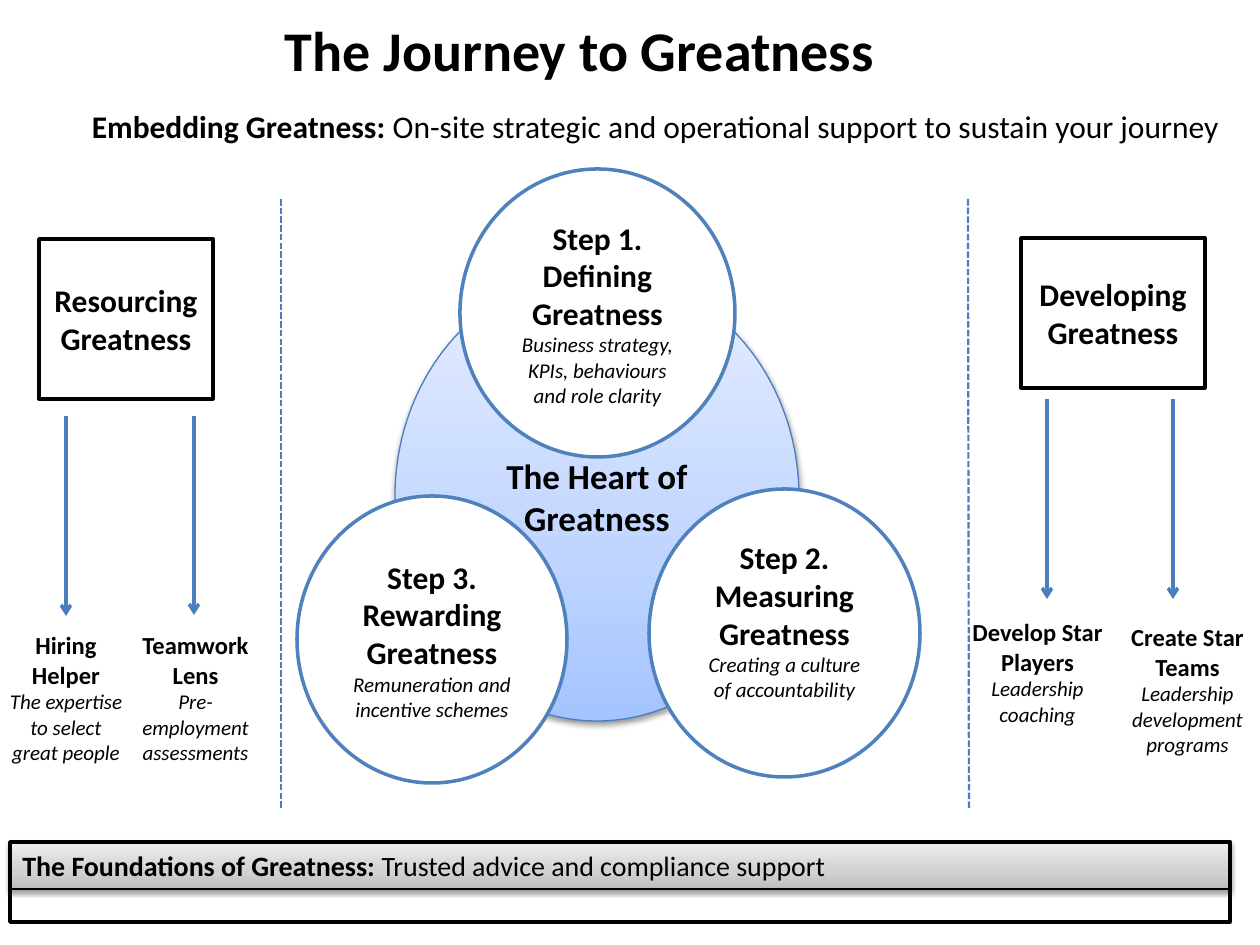
from copy import deepcopy

from lxml.etree import SubElement
from pptx import Presentation
from pptx.dml.color import RGBColor
from pptx.enum.dml import MSO_LINE
from pptx.enum.shapes import MSO_CONNECTOR, MSO_SHAPE
from pptx.enum.text import MSO_ANCHOR, MSO_AUTO_SIZE, PP_ALIGN
from pptx.oxml.ns import qn
from pptx.util import Emu, Pt

PX = 914400 / 126
FONT = "Calibri"
BLACK, WHITE = "000000", "FFFFFF"
RING, BLUE = "4F81BD", "4B7EBC"


def px(length):
    return Emu(round(length * PX))


def color(value):
    return RGBColor.from_string(value)


def style(para, size, bold=None, italic=None, align=PP_ALIGN.CENTER):
    para.alignment = align
    font = para.font
    font.name, font.size = FONT, Pt(size)
    font.bold, font.italic = bold, italic
    font.color.rgb = color(BLACK)


def write(frame, headings, size, detail=None):
    """Bold heading paragraphs, then an optional italic detail."""
    frame.word_wrap = True
    lines = [(text, size, True, False) for text in headings]
    if detail:
        lines.append((detail, 12, False, True))
    for index, (text, points, bold, italic) in enumerate(lines):
        para = frame.add_paragraph() if index else frame.paragraphs[0]
        para.text = text
        style(para, points, bold, italic)


def write_lead(frame, lead, rest, size, align):
    """One paragraph with a bold lead-in."""
    frame.word_wrap = True
    para = frame.paragraphs[0]
    style(para, size, align=align)
    for text, bold in ((lead, True), (rest, False)):
        span = para.add_run()
        span.text = text
        span.font.bold = bold


def add_shape(page, kind, place, line, width, fill=None):
    shape = page.shapes.add_shape(kind, *map(px, place))
    shape.shadow.inherit = False
    shape.line.color.rgb = color(line)
    shape.line.width = Pt(width)
    if fill:
        shape.fill.solid()
        shape.fill.fore_color.rgb = color(fill)
    else:
        shape.fill.background()
    shape.text_frame.vertical_anchor = MSO_ANCHOR.MIDDLE
    return shape


def add_gradient(shape, colors):
    """Three stops, running from the bottom edge up."""
    shape.fill.gradient()
    shape.fill.gradient_angle = 90
    stops = shape._element.spPr.find(f".//{qn('a:gsLst')}")
    stops.insert(1, deepcopy(stops[0]))
    for stop, position, value in zip(shape.fill.gradient_stops, (0, 0.35, 1), colors):
        stop.position = position
        stop.color.rgb = color(value)


def add_shadow(shape):
    effects = shape._element.spPr.find(qn("a:effectLst"))
    shadow = SubElement(effects, qn("a:outerShdw"), blurRad=str(Pt(3.1)),
                        dist=str(Pt(1.6)), dir="5400000", rotWithShape="0")
    shade = SubElement(shadow, qn("a:srgbClr"), val=BLACK)
    SubElement(shade, qn("a:alpha"), val="38000")


def add_line(page, start, end, width):
    line = page.shapes.add_connector(MSO_CONNECTOR.STRAIGHT, *map(px, start + end))
    line.line.color.rgb = color(BLUE)
    line.line.width = Pt(width)
    SubElement(line._element.spPr, qn("a:effectLst"))
    return line


def add_divider(page, top_x, bottom_x):
    line = add_line(page, (top_x, 199), (bottom_x, 809), 1.25)
    line.line.dash_style = MSO_LINE.SQUARE_DOT


def add_arrow(page, x, top, bottom):
    line = add_line(page, (x, top), (x, bottom), 2)
    SubElement(line.get_or_add_ln(), qn("a:tailEnd"), type="arrow")


def add_text(page, place):
    box = page.shapes.add_textbox(*map(px, place))
    box.text_frame.auto_size = MSO_AUTO_SIZE.SHAPE_TO_FIT_TEXT
    return box.text_frame


def add_title(page):
    title = page.shapes.title
    title.left, title.top, title.width, title.height = map(px, (136, 10, 887, 79))
    title.text_frame.vertical_anchor = MSO_ANCHOR.MIDDLE
    write(title.text_frame, ["The Journey to Greatness"], 32)


def add_steps(page):
    heart = add_shape(page, MSO_SHAPE.OVAL, (395, 272, 404, 449), BLUE, 0.75)
    add_gradient(heart, ("A4C4FF", "BFD4FF", "E6EEFF"))
    add_shadow(heart)
    write(heart.text_frame, ["The Heart of Greatness"], 20)

    steps = [
        ((460, 169, 275, 288), "Step 1. Defining Greatness",
         "Business strategy, KPIs, behaviours and role clarity", 6),
        ((649, 489, 271, 288), "Step 2. Measuring Greatness",
         "Creating a culture of accountability", 32),
        ((297, 496, 270, 287), "Step 3. Rewarding Greatness",
         "Remuneration and incentive schemes", 6),
    ]
    for place, heading, detail, bottom in steps:
        circle = add_shape(page, MSO_SHAPE.OVAL, place, RING, 2, WHITE)
        circle.text_frame.margin_bottom = px(bottom)
        write(circle.text_frame, [heading], 18, detail)


def add_sides(page):
    add_divider(page, 281, 281)
    add_divider(page, 968, 969)

    for place, heading in (((39, 239, 174, 160), "Resourcing Greatness"),
                           ((1021, 238, 184, 150), "Developing Greatness")):
        box = add_shape(page, MSO_SHAPE.RECTANGLE, place, BLACK, 2, WHITE)
        write(box.text_frame, [heading], 18)

    for x, top, bottom in ((66, 416, 616), (194, 416, 615),
                           (1047, 399, 599), (1173, 399, 599)):
        add_arrow(page, x, top, bottom)

    services = [
        ((-5, 624, 142, 149), ["Hiring Helper"], "The expertise to select great people"),
        ((123, 624, 145, 178), ["Teamwork", "Lens"], "Pre-employment assessments"),
        ((958, 611, 159, 152), ["Develop Star Players"], "Leadership coaching"),
        ((1108, 616, 159, 178), ["Create Star Teams"], "Leadership development programs"),
    ]
    for place, headings, detail in services:
        write(add_text(page, place), headings, 14, detail)


def add_foundations(page):
    bar = add_shape(page, MSO_SHAPE.RECTANGLE, (10, 842, 1220, 47), BLACK, 0.75)
    add_gradient(bar, ("BDBDBD", "D1D1D1", "EEEEEE"))
    add_shadow(bar)
    bar.text_frame.vertical_anchor = MSO_ANCHOR.TOP
    write_lead(bar.text_frame, "The Foundations of Greatness: ",
               "Trusted advice and compliance support", 16, PP_ALIGN.LEFT)
    add_shape(page, MSO_SHAPE.RECTANGLE, (10, 842, 1220, 80), BLACK, 2)


def main():
    deck = Presentation()
    deck.slide_width, deck.slide_height = px(1260), px(945)
    page = deck.slides.add_slide(deck.slide_layouts[5])

    # Heading
    add_title(page)
    write_lead(add_text(page, (66, 101, 1179, 50)), "Embedding Greatness: ",
               "On-site strategic and operational support to sustain your journey",
               18, PP_ALIGN.CENTER)

    # Diagram and its two side columns
    add_steps(page)
    add_sides(page)

    # Base
    add_foundations(page)
    deck.save("out.pptx")


if __name__ == "__main__":
    main()
